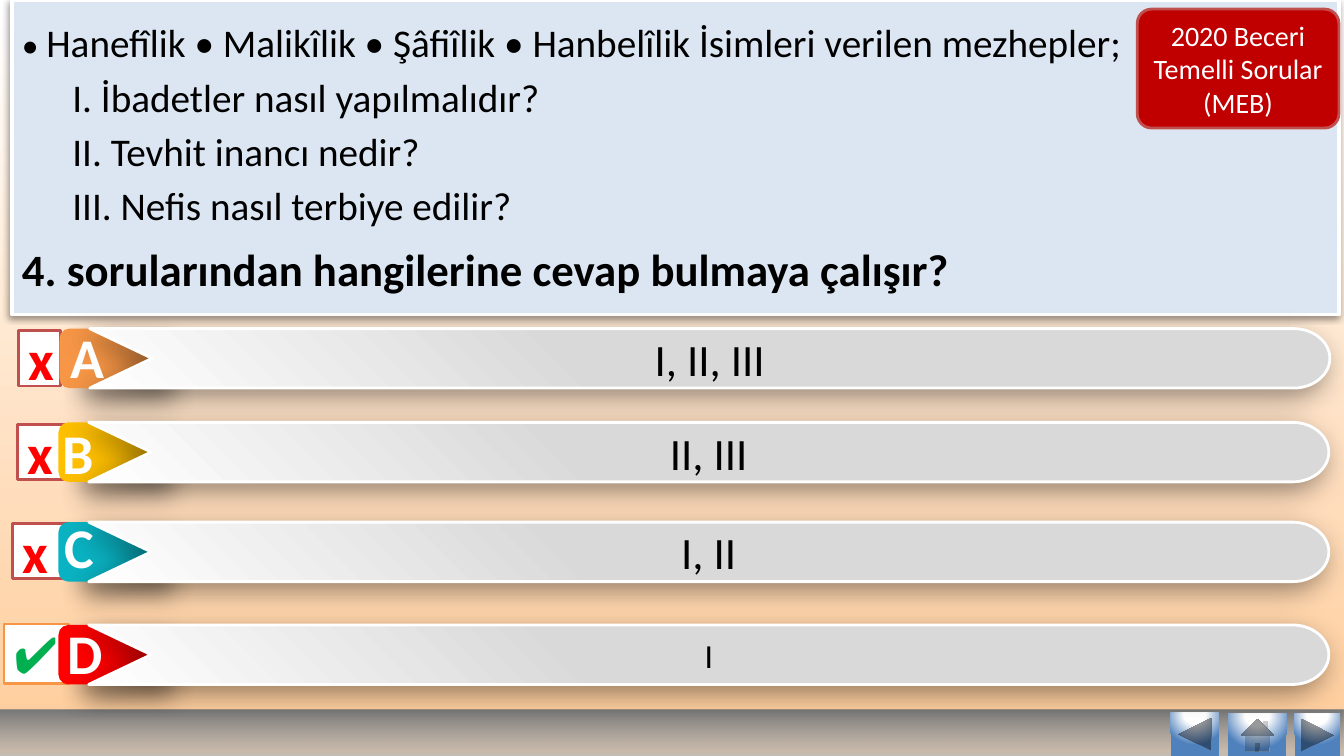
from pptx import Presentation, oxml
from pptx import util as u
from pptx.dml import color
from pptx.enum import shapes, text
from pptx.oxml import ns

COLORS = {
    "white": "FFFFFF", "black": "000000", "panel": "DCE6F2", "peach": "FFCC99",
    "silver": "C0C0C0", "ash": "B3B3B3", "slate": "777777", "blue": "4F81BD",
    "pill": "D9D9D9", "orange": "F79646", "amber": "FFC000", "teal": "0AB3C3",
    "red": "FF0000", "green": "00B050", "brick": "C0504D", "badge": "C00000",
    "letter": "FEFEFE",
}
RGB = {name: color.RGBColor.from_string(value) for name, value in COLORS.items()}
A = ns.nsdecls("a")
KINDS = shapes.MSO_SHAPE
CENTER = text.PP_ALIGN.CENTER


def decorate(shape, fill, line=None, width=2, shadow=None, scale=100):
    shape.shadow.inherit = False
    if isinstance(fill, str):
        shape.fill.solid()
        shape.fill.fore_color.rgb = RGB[fill]
    else:
        stops, direction = fill
        shape.fill.gradient()
        gradient = shape._element.spPr.find(ns.qn("a:gradFill"))
        for child in list(gradient):
            gradient.remove(child)
        marks = "".join(
            f'<a:gs pos="{place * 1000}"><a:srgbClr val="{COLORS[name]}">'
            f'<a:alpha val="{alpha * 1000}"/></a:srgbClr></a:gs>'
            for place, name, alpha in stops)
        gradient.append(oxml.parse_xml(f"<a:gsLst {A}>{marks}</a:gsLst>"))
        gradient.append(oxml.parse_xml(direction))
    if line:
        shape.line.color.rgb = RGB[line]
        shape.line.width = u.Pt(width)
    else:
        shape.line.fill.background()
    if shadow:
        alpha, blur, distance, angle = shadow
        effects = shape._element.spPr.find(ns.qn("a:effectLst"))
        effects.append(oxml.parse_xml(
            f'<a:outerShdw {A} blurRad="{u.Pt(blur)}" dist="{u.Pt(distance)}" '
            f'dir="{angle * 60000}" sx="{scale * 1000}" algn="br" rotWithShape="0">'
            f'<a:srgbClr val="{COLORS["black"]}">'
            f'<a:alpha val="{alpha * 1000}"/></a:srgbClr></a:outerShdw>'))


def write(paragraph, words, size, ink, bold=False, align=text.PP_ALIGN.LEFT):
    paragraph.alignment = align
    run = paragraph.add_run()
    run.text = words
    run.font.color.rgb = RGB[ink]
    for name, value in {"name": "Calibri", "size": u.Pt(size), "bold": bold}.items():
        setattr(run.font, name, value)
    return run


presentation = Presentation()
presentation.slide_width = u.Inches(13.33)
presentation.slide_height = u.Inches(7.5)
slide = presentation.slides.add_slide(presentation.slide_layouts[6])

background = slide.background.fill
background.gradient()
background.gradient_angle = 270
for stop, place, name in zip(background.gradient_stops, (0, 1), ("white", "peach")):
    stop.position = place
    stop.color.rgb = RGB[name]

panel = slide.shapes.add_shape(
    KINDS.RECTANGLE, u.Inches(0.12), 0, u.Inches(13.16), u.Inches(3.12))
decorate(panel, "panel", "white", 2.5, (40, 4, 3, 135))
panel.text_frame.vertical_anchor = text.MSO_ANCHOR.MIDDLE
panel.text_frame.word_wrap = True
first = panel.text_frame.paragraphs[0]
first.space_before = u.Pt(10)
write(first, "• ", 24, "black")
write(first, "Hanefîlik • Malikîlik • Şâfiîlik • Hanbelîlik İsimleri verilen mezhepler;", 28, "black")
for item in ("I. İbadetler nasıl yapılmalıdır?", "II. Tevhit inancı nedir?",
             "III. Nefis nasıl terbiye edilir?"):
    paragraph = panel.text_frame.add_paragraph()
    paragraph.level = 1
    paragraph.space_before = u.Pt(5)
    write(paragraph, item, 28, "black")
    properties = paragraph._p.get_or_add_pPr()
    properties.set("marL", str(u.Inches(0.5)))
    properties.set("indent", "0")
question = panel.text_frame.add_paragraph()
question.space_before = u.Pt(10)
write(question, "4. sorularından hangilerine cevap bulmaya çalışır?", 32, "black", True)

footer = slide.shapes.add_shape(
    KINDS.RECTANGLE, 0, u.Inches(7.04), u.Inches(13.33), u.Inches(0.49))
decorate(footer, (((0, "silver", 100), (17, "ash", 70), (100, "slate", 100)),
                  f'<a:lin {A} ang="16200000" scaled="0"/>'))

glow = (f'<a:path {A} path="circle"><a:fillToRect l="50000" t="-80000" '
        f'r="50000" b="180000"/></a:path>')
for kind, left, top, width in (
        (KINDS.ACTION_BUTTON_BACK_OR_PREVIOUS, 11.61, 7.07, 0.48),
        (KINDS.ACTION_BUTTON_FORWARD_OR_NEXT, 12.84, 7.08, 0.45),
        (KINDS.ACTION_BUTTON_HOME, 12.18, 7.08, 0.58)):
    button = slide.shapes.add_shape(
        kind, u.Inches(left), u.Inches(top), u.Inches(width), u.Inches(0.43))
    decorate(button, (((0, "white", 100), (35, "white", 100), (100, "blue", 100)), glow))

answers = (
    ("A", "I, II, III", 32, "orange", 0.59, 3.26, (0.18, 3.28, 0.42, 0.55), (0.47, 3.15)),
    ("B", "II, III", 32, "amber", 0.58, 4.19, (0.17, 4.21, 0.55, 0.55), (0.38, 4.1)),
    ("C", "I, II", 32, "teal", 0.58, 5.18, (0.12, 5.19, 0.55, 0.55), (0.39, 5.04)),
    ("D", "I", 24, "red", 0.58, 6.2, (0.04, 6.19, 0.64, 0.59), (0.45, 6.09)),
)
pill_width, pill_height, cap_width = map(u.Inches, (12.3, 0.59, 0.36))
cap = pill_width - cap_width
middle = pill_height // 2
cap_curves = (
    ((cap + cap_width * 0.55, 0), (pill_width, middle * 0.45), (pill_width, middle)),
    ((pill_width, middle * 1.55), (cap + cap_width * 0.55, pill_height), (cap, pill_height)),
)
for letter, answer, size, tint, left, top, box, letter_place in answers:
    correct = letter == "D"
    mark = slide.shapes.add_shape(KINDS.RECTANGLE, *map(u.Inches, box))
    decorate(mark, "white", "orange" if correct else "brick")
    mark.text_frame.vertical_anchor = text.MSO_ANCHOR.MIDDLE
    mark_style = ("✔", 36, "green") if correct else ("x", 40, "red", True)
    write(mark.text_frame.paragraphs[0], *mark_style)

    group = slide.shapes.add_group_shape()
    tab = group.shapes.add_shape(
        KINDS.ROUNDED_RECTANGLE, u.Inches(left), u.Inches(top), u.Inches(1.31), pill_height)
    decorate(tab, tint, shadow=(40, 18, 15, 143), scale=70)

    builder = group.shapes.build_freeform(0, 0)
    builder.add_line_segments([(cap, 0), (pill_width, middle), (cap, pill_height),
                               (0, pill_height), (u.Inches(0.62), middle)])
    pill = builder.convert_to_shape(u.Inches(left + 0.3), u.Inches(top))
    corners = list(pill._element.iter(ns.qn("a:lnTo")))[1:3]
    for corner, curve in zip(corners, cap_curves):
        points = "".join(f'<a:pt x="{round(x)}" y="{round(y)}"/>' for x, y in curve)
        corner.getparent().replace(
            corner, oxml.parse_xml(f"<a:cubicBezTo {A}>{points}</a:cubicBezTo>"))
    decorate(pill, (((0, "white", 100), (40, "pill", 100), (100, "pill", 100)),
                    f'<a:lin {A} ang="18900000" scaled="0"/>'),
             "white", shadow=(40, 20, 7, 135))
    pill.text_frame.vertical_anchor = text.MSO_ANCHOR.MIDDLE
    write(pill.text_frame.paragraphs[0], answer, size, "black", align=CENTER)

    label = slide.shapes.add_textbox(
        *map(u.Inches, letter_place), u.Inches(0.79), u.Inches(0.77))
    label.text_frame.word_wrap = True
    run = write(label.text_frame.paragraphs[0], letter, 40, "letter", True, CENTER)
    run_properties = run.font._element
    run_properties.set("spc", "50")
    run_properties.insert(0, oxml.parse_xml(
        f'<a:ln {A} w="{u.Pt(0.75)}"><a:solidFill><a:srgbClr val="{COLORS["white"]}"/>'
        f'</a:solidFill></a:ln>'))
    run_properties.insert(2, oxml.parse_xml(
        f'<a:effectLst {A}><a:outerShdw blurRad="{u.Pt(3)}" dist="{u.Pt(1)}" dir="2700000">'
        f'<a:srgbClr val="{COLORS["slate"]}"/></a:outerShdw></a:effectLst>'))

badge = slide.shapes.add_shape(
    KINDS.ROUNDED_RECTANGLE, u.Inches(11.28), u.Inches(0.09), u.Inches(2), u.Inches(1.18))
badge.adjustments[0] = 0.12
decorate(badge, "badge", "brick")
badge.text_frame.vertical_anchor = text.MSO_ANCHOR.MIDDLE
badge.text_frame.word_wrap = True
write(badge.text_frame.paragraphs[0], "2020 Beceri Temelli Sorular (MEB)", 20, "white", align=CENTER)

presentation.save("out.pptx")
